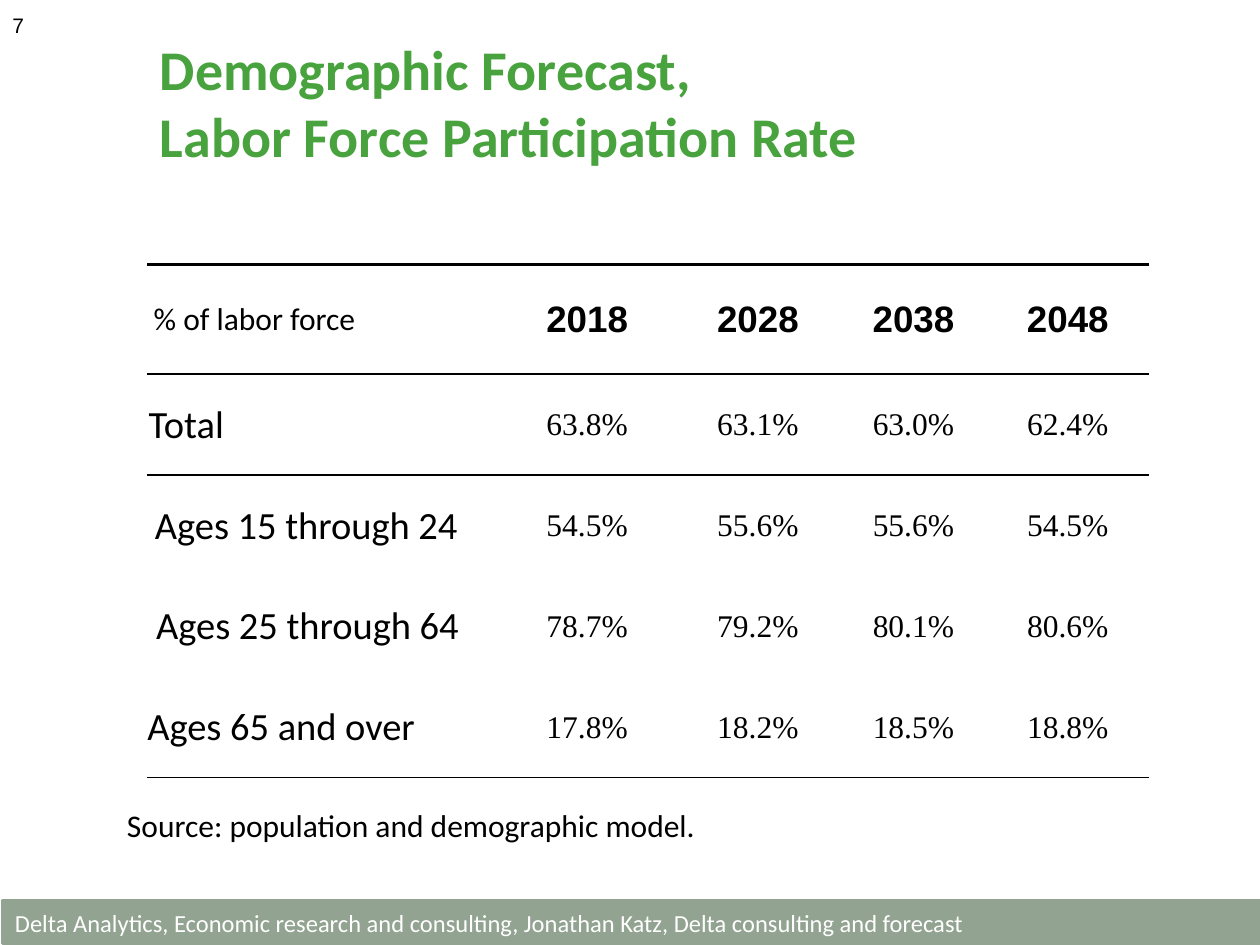
from lxml import etree
from pptx import Presentation
from pptx.dml.color import RGBColor
from pptx.enum.shapes import MSO_SHAPE
from pptx.enum.text import MSO_ANCHOR, PP_ALIGN
from pptx.oxml.ns import qn
from pptx.util import Inches, Pt

LEFT, CENTER = PP_ALIGN.LEFT, PP_ALIGN.CENTER
TOP, MIDDLE = MSO_ANCHOR.TOP, MSO_ANCHOR.MIDDLE

GREEN = RGBColor(0x48, 0xA2, 0x3E)
SAGE = RGBColor(0x92, 0xA3, 0x91)
BLACK = RGBColor(0, 0, 0)
WHITE = RGBColor(0xFF, 0xFF, 0xFF)

# Content
TITLE = "Demographic Forecast,\vLabor Force Participation Rate"
PAGE_NUMBER = "7"
SOURCE = "Source: population and demographic model."
FOOTER = ("Delta Analytics, Economic research and consulting, Jonathan Katz, "
          "Delta consulting and forecast")
RATES = [
    ("% of labor force", "2018", "2028", "2038", "2048"),
    ("Total", "63.8%", "63.1%", "63.0%", "62.4%"),
    ("Ages 15 through 24", "54.5%", "55.6%", "55.6%", "54.5%"),
    ("Ages 25 through 64", "78.7%", "79.2%", "80.1%", "80.6%"),
    ("Ages 65 and over", "17.8%", "18.2%", "18.5%", "18.8%"),
]
LABEL_INDENTS = [0.05, 0.01, 0.06, 0.07, 0]
COLUMN_WIDTHS = [2.79, 1.4, 1.31, 1.16, 1.29]
ROW_HEIGHTS = [0.87, 0.8, 0.8, 0.8, 0.8]
# Rule widths in points: above the header, then below each row
RULES = [2.25, 1, 1, 0, 0, 1]


def write(frame, text, size, font="Calibri", color=BLACK, bold=False,
          align=LEFT):
    frame.text = text
    paragraph = frame.paragraphs[0]
    paragraph.alignment = align
    for run in paragraph.runs:
        run.font.size = Pt(size)
        run.font.name = font
        run.font.bold = bold
        run.font.color.rgb = color


def add_text(slide, box, text, size, anchor=MIDDLE, **style):
    frame = slide.shapes.add_textbox(*map(Inches, box)).text_frame
    frame.word_wrap = True
    frame.vertical_anchor = anchor
    write(frame, text, size, **style)


def set_borders(cell, above, below):
    properties = cell._tc.get_or_add_tcPr()
    widths = {"a:lnL": 0, "a:lnR": 0, "a:lnT": above, "a:lnB": below}
    for position, (tag, width) in enumerate(widths.items()):
        line = etree.Element(qn(tag), w=str(Pt(width)))
        if width:
            fill = etree.SubElement(line, qn("a:solidFill"))
            etree.SubElement(fill, qn("a:srgbClr"), val=str(BLACK))
        else:
            etree.SubElement(line, qn("a:noFill"))
        properties.insert(position, line)


def add_rates_table(slide):
    table = slide.shapes.add_table(
        len(RATES), len(COLUMN_WIDTHS), Inches(1.17), Inches(2.1),
        Inches(sum(COLUMN_WIDTHS)), Inches(sum(ROW_HEIGHTS))).table
    table.first_row = table.horz_banding = False
    for column, width in zip(table.columns, COLUMN_WIDTHS):
        column.width = Inches(width)
    for r, (row, height) in enumerate(zip(RATES, ROW_HEIGHTS)):
        table.rows[r].height = Inches(height)
        for c, text in enumerate(row):
            cell = table.cell(r, c)
            cell.vertical_anchor = MIDDLE
            cell.margin_left = Inches(0.01 if c else LABEL_INDENTS[r])
            cell.margin_right = cell.margin_top = Inches(0.01)
            cell.margin_bottom = 0
            cell.fill.background()
            set_borders(cell, RULES[r], RULES[r + 1])
            if c == 0:
                write(cell.text_frame, text, 22 if r else 18)
            elif r == 0:
                write(cell.text_frame, text, 21, "Arial", bold=True,
                      align=CENTER)
            else:
                write(cell.text_frame, text, 18, "Times New Roman",
                      align=CENTER)


def main():
    deck = Presentation()
    deck.slide_width, deck.slide_height = Inches(10), Inches(7.5)
    slide = deck.slides.add_slide(deck.slide_layouts[6])

    # Footer band
    band = slide.shapes.add_shape(
        MSO_SHAPE.RECTANGLE, *map(Inches, (0.02, 7.15, 10.01, 0.34)))
    band.shadow.inherit = False
    band.fill.solid()
    band.fill.fore_color.rgb = band.line.color.rgb = SAGE
    band.line.width = Pt(2)
    band.text_frame.word_wrap = True
    band.text_frame.vertical_anchor = MIDDLE
    write(band.text_frame, FOOTER, 14, color=WHITE)

    # Title, page number, table and source note
    add_text(slide, (1.17, 0.21, 7.61, 1.2), TITLE, 32, color=GREEN, bold=True)
    add_text(slide, (0, 0, 2.33, 0.4), PAGE_NUMBER, 12, font="Arial")
    add_rates_table(slide)
    add_text(slide, (0.91, 6.35, 8.5, 0.4), SOURCE, 18, anchor=TOP)

    deck.save("out.pptx")


if __name__ == "__main__":
    main()
